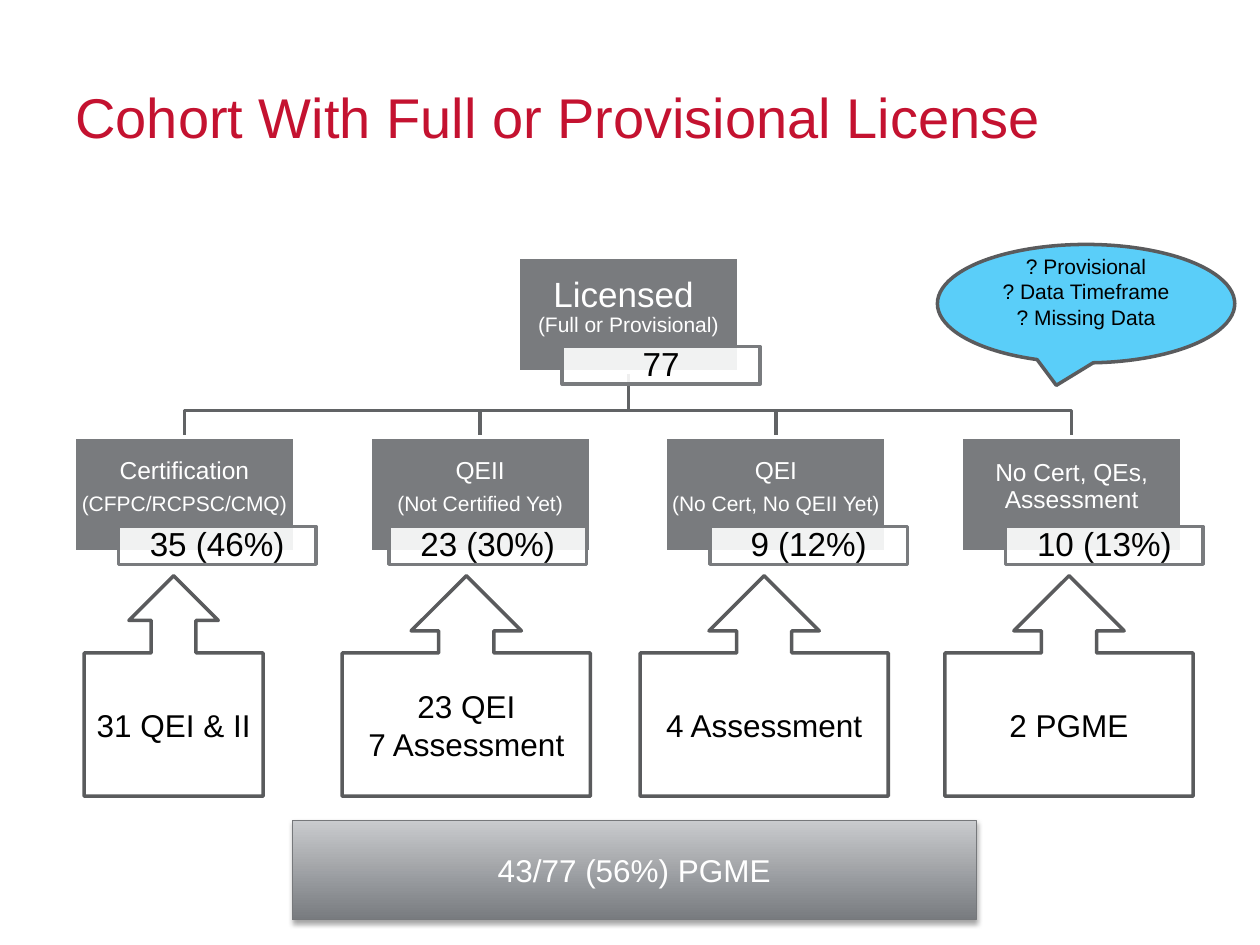
from dataclasses import dataclass

from lxml.etree import SubElement
from pptx import Presentation
from pptx.dml.color import RGBColor
from pptx.enum.shapes import MSO_SHAPE as Shape
from pptx.enum.text import MSO_ANCHOR as Anchor, PP_ALIGN as Align
from pptx.oxml.ns import qn
from pptx.util import Pt

FONT = "Arial"
RED = RGBColor(0xC4, 0x12, 0x30)
WHITE = RGBColor(0xFF, 0xFF, 0xFF)
BLACK = RGBColor(0x00, 0x00, 0x00)
GREY = RGBColor(0x79, 0x7B, 0x7E)
LINK_GREY = RGBColor(0x61, 0x63, 0x65)
OUTLINE = RGBColor(0x5A, 0x5B, 0x5D)
BLUE = RGBColor(0x5A, 0xCE, 0xF9)
BAR_DARK = RGBColor(0x78, 0x7B, 0x7F)
BAR_LIGHT = RGBColor(0xC9, 0xCB, 0xCE)
BAR_EDGE = RGBColor(0x76, 0x78, 0x7B)

NODE_W, NODE_H = 126, 65.6
COUNT_W, COUNT_H, COUNT_DY = 113, 21.6, 51.1
ROOT_X, ROOT_Y = 296.1, 146.9
BRANCH_X, BRANCH_Y, BRANCH_STEP = 42.4, 249.8, 169
BUS_Y = 234.7
ARROW_Y, ARROW_H = 329, 126


@dataclass
class Line:
    text: str
    size: float


@dataclass
class Node:
    lines: list[Line]
    count: str
    count_dx: float = 25.2


@dataclass
class Arrow:
    x: float
    w: float
    lines: list[str]


ROOT = Node([Line("Licensed ", 20), Line("(Full or Provisional)", 12)], "77")
BRANCHES = [
    Node([Line("Certification", 14), Line("(CFPC/RCPSC/CMQ)", 12)], "35 (46%)"),
    Node([Line("QEII", 14), Line("(Not Certified Yet)", 12)], "23 (30%)", 10.8),
    Node([Line("QEI", 14), Line("(No Cert, No QEII Yet)", 12)], "9 (12%)"),
    Node([Line("No Cert, QEs, Assessment", 14)], "10 (13%)"),
]
ARROWS = [
    Arrow(48.1, 102.2, ["31 QEI & II"]),
    Arrow(195.6, 141.8, ["23 QEI", "7 Assessment"]),
    Arrow(365.8, 141.8, ["4 Assessment"]),
    Arrow(540, 141.8, ["2 PGME"]),
]


def add_box(s, kind: Shape, x: float, y: float, w: float, h: float,
            fill: RGBColor | None, edge: RGBColor, width: float = 2):
    sp = s.shapes.add_shape(kind, Pt(x), Pt(y), Pt(w), Pt(h))
    sp.shadow.inherit = False
    if fill is None:
        sp.fill.background()
    else:
        sp.fill.solid()
        sp.fill.fore_color.rgb = fill
    sp.line.color.rgb = edge
    sp.line.width = Pt(width)
    return sp


def set_insets(tf, left: float, top: float, right: float, bottom: float) -> None:
    tf.margin_left, tf.margin_top = Pt(left), Pt(top)
    tf.margin_right, tf.margin_bottom = Pt(right), Pt(bottom)


def write(sp, lines: list[Line], color: RGBColor, align: Align = Align.CENTER,
          spacing: float = 1, after: float = 0) -> None:
    """Fill a shape with one paragraph per line."""
    tf = sp.text_frame
    tf.word_wrap = True
    tf.vertical_anchor = Anchor.MIDDLE
    for i, line in enumerate(lines):
        p = tf.add_paragraph() if i else tf.paragraphs[0]
        p.text = line.text
        p.alignment = align
        p.line_spacing = spacing
        p.space_after = Pt(after)
        p.font.name, p.font.size = FONT, Pt(line.size)
        p.font.color.rgb = color


def add_node(s, node: Node, x: float, y: float, joined: bool = False) -> None:
    """Draw a node and its count; joined keeps all lines in one paragraph."""
    sp = add_box(s, Shape.RECTANGLE, x, y, NODE_W, NODE_H, GREY, WHITE)
    set_insets(sp.text_frame, 0.9, 0.9, 0.9, 9.3)
    head, tail = (node.lines[:1], node.lines[1:]) if joined else (node.lines, [])
    write(sp, head, WHITE, spacing=0.9, after=5)
    for line in tail:
        p = sp.text_frame.paragraphs[0]
        p.add_line_break()
        r = p.add_run()
        r.text = line.text
        r.font.size = Pt(line.size)

    count = add_box(s, Shape.RECTANGLE, x + node.count_dx, y + COUNT_DY,
                    COUNT_W, COUNT_H, WHITE, GREY)
    rgb = count.fill._xPr.find(qn("a:solidFill")).find(qn("a:srgbClr"))
    SubElement(rgb, qn("a:alpha"), val="90000")
    set_insets(count.text_frame, 3.6, 0.9, 3.6, 0.9)
    write(count, [Line(node.count, 19)], BLACK, spacing=0.9)


def add_link(s, x: float) -> None:
    """Draw the elbow line from the root node to a branch centred on x."""
    root_x = ROOT_X + NODE_W / 2
    fb = s.shapes.build_freeform(Pt(root_x), Pt(ROOT_Y + NODE_H))
    corners = [(root_x, BUS_Y), (x, BUS_Y), (x, BRANCH_Y)]
    fb.add_line_segments([(Pt(px), Pt(py)) for px, py in corners], close=False)
    sp = fb.convert_to_shape()
    sp.shadow.inherit = False
    sp.fill.background()
    sp.line.color.rgb = LINK_GREY
    sp.line.width = Pt(2)


def add_total_bar(s) -> None:
    sp = add_box(s, Shape.RECTANGLE, 167, 468.7, 391, 56.9, BAR_DARK, BAR_EDGE, 0.75)
    sp.fill.gradient()
    sp.fill.gradient_angle = 90
    for stop, color in zip(sp.fill.gradient_stops, (BAR_DARK, BAR_LIGHT)):
        stop.color.rgb = color
    effects = sp._element.spPr.find(qn("a:effectLst"))
    shadow = SubElement(effects, qn("a:outerShdw"), blurRad=str(Pt(3.1)),
                        dist=str(Pt(1.8)), dir="5400000", rotWithShape="0")
    rgb = SubElement(shadow, qn("a:srgbClr"), val=str(BLACK))
    SubElement(rgb, qn("a:alpha"), val="35000")
    write(sp, [Line("43/77 (56%) PGME", 18)], WHITE)


def main() -> None:
    prs = Presentation()
    prs.slide_width, prs.slide_height = Pt(720), Pt(540)
    s = prs.slides.add_slide(prs.slide_layouts[6])

    title = s.shapes.add_textbox(Pt(36), Pt(21.6), Pt(648), Pt(90))
    write(title, [Line("Cohort With Full or Provisional License", 32)], RED, Align.LEFT)

    branch_xs = [BRANCH_X + i * BRANCH_STEP for i in range(len(BRANCHES))]
    for x in reversed(branch_xs):
        add_link(s, x + NODE_W / 2)
    add_node(s, ROOT, ROOT_X, ROOT_Y, joined=True)
    for node, x in zip(BRANCHES, branch_xs):
        add_node(s, node, x, BRANCH_Y)

    for arrow in ARROWS:
        sp = add_box(s, Shape.UP_ARROW_CALLOUT, arrow.x, ARROW_Y, arrow.w, ARROW_H,
                     None, OUTLINE)
        write(sp, [Line(text, 18) for text in arrow.lines], BLACK)

    bubble = add_box(s, Shape.OVAL_CALLOUT, 535.7, 139.7, 169.9, 67.7, BLUE, OUTLINE)
    bubble.adjustments[0], bubble.adjustments[1] = -0.1, 0.69
    set_insets(bubble.text_frame, 7.2, 3.6, 7.2, 17.4)
    questions = ["? Provisional", "? Data Timeframe", "? Missing Data"]
    write(bubble, [Line(text, 12) for text in questions], BLACK)

    add_total_bar(s)
    prs.save("out.pptx")


if __name__ == "__main__":
    main()
